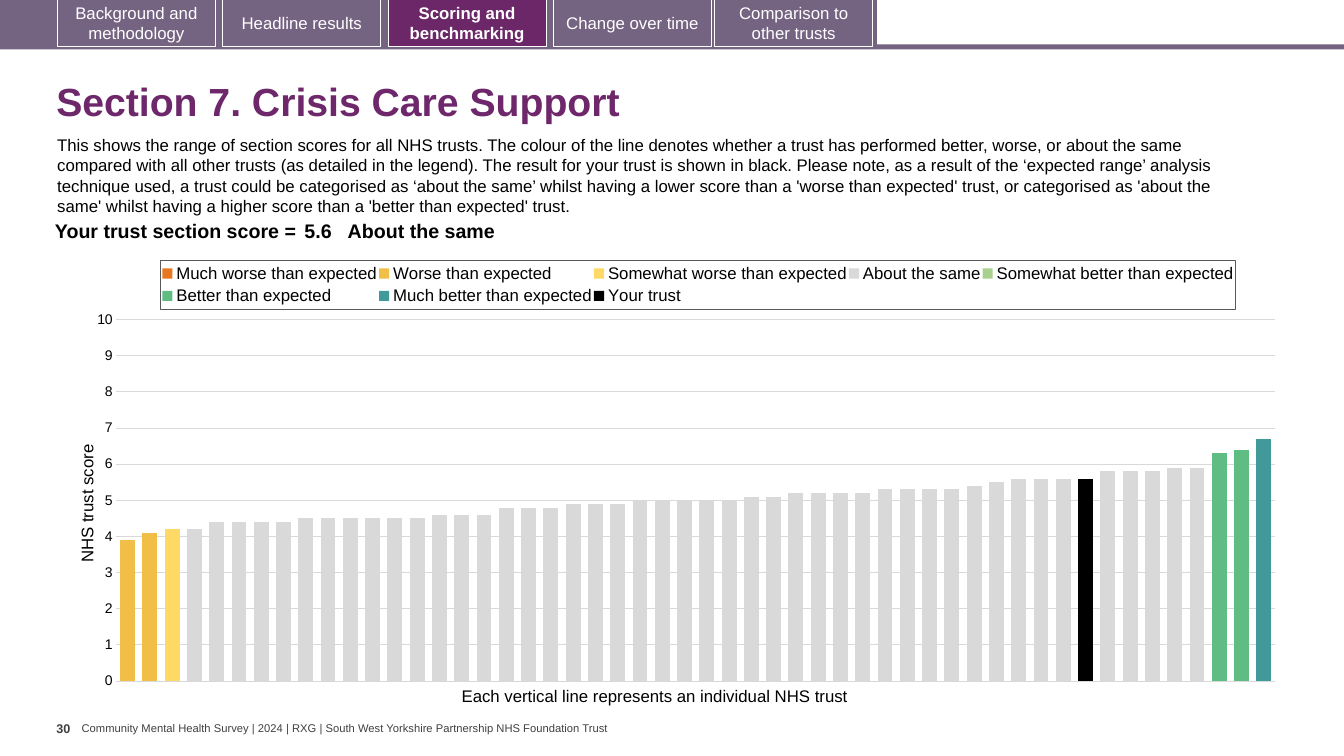
from copy import deepcopy

from lxml.etree import SubElement
from pptx import Presentation
from pptx.chart.data import CategoryChartData
from pptx.dml.color import RGBColor
from pptx.enum.chart import XL_CHART_TYPE, XL_LEGEND_POSITION, XL_TICK_MARK
from pptx.enum.shapes import MSO_SHAPE
from pptx.enum.text import MSO_ANCHOR, PP_ALIGN
from pptx.oxml import parse_xml
from pptx.oxml.ns import nsdecls, qn
from pptx.util import Pt

WHITE = RGBColor(0xFF, 0xFF, 0xFF)
BLACK = RGBColor(0, 0, 0)
DARK_GREY = RGBColor(0x40, 0x40, 0x40)
AXIS_GREY = RGBColor(0x59, 0x59, 0x59)
GRID_GREY = RGBColor(0xD9, 0xD9, 0xD9)
BAND_PURPLE = RGBColor(0x75, 0x63, 0x82)
ACTIVE_PURPLE = RGBColor(0x6B, 0x27, 0x68)
TITLE_PURPLE = RGBColor(0x6D, 0x27, 0x6A)

TABS = [("Background and methodology", 41), ("Headline results", 159.1),
        ("Scoring and benchmarking", 277.2), ("Change over time", 395.3),
        ("Comparison to other trusts", 510.5)]
ACTIVE_TAB = "Scoring and benchmarking"

INTRODUCTION = (
    "This shows the range of section scores for all NHS trusts. The colour of the line denotes "
    "whether a trust has performed better, worse, or about the same compared with all other trusts "
    "(as detailed in the legend). The result for your trust is shown in black. Please note, as a "
    "result of the ‘expected range’ analysis technique used, a trust could be categorised as ‘about "
    "the same’ whilst having a lower score than a 'worse than expected' trust, or categorised as "
    "'about the same' whilst having a higher score than a 'better than expected' trust.")

TRUST_COUNT = 52
ABOUT_THE_SAME = (
    [4.2] + [4.4] * 4 + [4.5] * 6 + [4.6] * 3 + [4.8] * 3 + [4.9] * 3 + [5] * 5 + [5.1] * 2
    + [5.2] * 4 + [5.3] * 4 + [5.4, 5.5] + [5.6] * 4 + [5.8] * 3 + [5.9] * 2)
# Name, colour, position of the first bar, scores
SERIES = [
    ("Much worse than expected", RGBColor(0xE8, 0x77, 0x22), 0, []),
    ("Worse than expected", RGBColor(0xF1, 0xBE, 0x48), 0, [3.9, 4.1]),
    ("Somewhat worse than expected", RGBColor(0xFF, 0xD9, 0x66), 2, [4.2]),
    ("About the same", GRID_GREY, 3, ABOUT_THE_SAME),
    ("Somewhat better than expected", RGBColor(0xA9, 0xD1, 0x8E), 0, []),
    ("Better than expected", RGBColor(0x5F, 0xBD, 0x83), 49, [6.3, 6.4]),
    ("Much better than expected", RGBColor(0x41, 0x99, 0x99), 51, [6.7]),
    ("Your trust", BLACK, 43, [5.6]),
]


def write_text(frame, text, size=12, color=BLACK, bold=False, align=PP_ALIGN.LEFT,
               anchor=MSO_ANCHOR.TOP, wrap=True, margins=(7.2, 3.6), line_spacing=None):
    frame.word_wrap = wrap
    frame.vertical_anchor = anchor
    frame.margin_left = frame.margin_right = Pt(margins[0])
    frame.margin_top = frame.margin_bottom = Pt(margins[1])
    paragraph = frame.paragraphs[0]
    paragraph.alignment = align
    paragraph.line_spacing = line_spacing
    run = paragraph.add_run()
    run.text = text
    set_font(run.font, size, color, bold)


def set_font(font, size, color=BLACK, bold=False, name="Arial"):
    font.name, font.size, font.bold = name, Pt(size), bold
    font.color.rgb = color


def add_text(slide, text, left, top, width, height, **text_format):
    box = slide.shapes.add_textbox(Pt(left), Pt(top), Pt(width), Pt(height))
    write_text(box.text_frame, text, **text_format)


def add_rectangle(slide, left, top, width, height, fill, line=None):
    shape = slide.shapes.add_shape(MSO_SHAPE.RECTANGLE, Pt(left), Pt(top), Pt(width), Pt(height))
    shape.shadow.inherit = False
    shape.fill.solid()
    shape.fill.fore_color.rgb = fill
    if line is None:
        shape.line.fill.background()
    else:
        shape.line.color.rgb = line
        shape.line.width = Pt(0.75)
    return shape


def add_navigation(slide, left, top, width):
    add_rectangle(slide, left, top + 31.7, width, 3.6, BAND_PURPLE)
    add_rectangle(slide, left, top, 626.4, 33.8, BAND_PURPLE)
    for label, offset in TABS:
        active = label == ACTIVE_TAB
        tab = add_rectangle(slide, left + offset, top - 0.7, 113, 33.8,
                            ACTIVE_PURPLE if active else BAND_PURPLE, line=WHITE)
        write_text(tab.text_frame, label, color=WHITE, bold=active,
                   align=PP_ALIGN.CENTER, anchor=MSO_ANCHOR.MIDDLE)


def add_score_table(slide, left, top, width, height):
    cells = [("Your trust section score =", 189.4, PP_ALIGN.RIGHT, 2.88),
             ("5.6", 33.8, PP_ALIGN.LEFT, 2.88),
             ("About the same", width - 223.2, PP_ALIGN.LEFT, 0)]
    table = slide.shapes.add_table(1, len(cells), Pt(left), Pt(top), Pt(width), Pt(height)).table
    table.first_row = table.horz_banding = False
    for index, (text, column_width, align, side_margin) in enumerate(cells):
        table.columns[index].width = Pt(column_width)
        cell = table.cell(0, index)
        cell.fill.background()
        write_text(cell.text_frame, text, size=14, bold=True, align=align)
        cell.margin_left = cell.margin_right = Pt(side_margin)
        cell.margin_top = cell.margin_bottom = Pt(2.88)


def make_layout(x, y, width=None, height=None, inner=False):
    layout = parse_xml(f"<c:layout {nsdecls('c')}><c:manualLayout/></c:layout>")
    values = [("layoutTarget", "inner" if inner else None), ("xMode", "edge"), ("yMode", "edge"),
              ("x", x), ("y", y), ("w", width), ("h", height)]
    for tag, value in values:
        if value is not None:
            SubElement(layout[0], qn(f"c:{tag}")).set("val", str(value))
    return layout


def move_last_series_to_right_axis(chart):
    """Put the last series in a bar group of its own, on a second pair of axes."""
    plot_area = chart.plots[0]._element.getparent()
    left_group = plot_area.find(qn("c:barChart"))
    right_group = deepcopy(left_group)
    left_series = left_group.findall(qn("c:ser"))
    left_group.remove(left_series[-1])
    for series in right_group.findall(qn("c:ser"))[:-1]:
        right_group.remove(series)
    left_group.addnext(right_group)
    for axis_id, value in zip(right_group.findall(qn("c:axId")), ("5001", "5002")):
        axis_id.set("val", value)
    axis = ('<c:{kind} {ns}><c:axId val="{id}"/><c:scaling><c:orientation val="minMax"/>{limits}'
            '</c:scaling><c:delete val="{hidden}"/><c:axPos val="{side}"/>'
            '<c:majorTickMark val="out"/><c:minorTickMark val="none"/><c:tickLblPos val="none"/>'
            '<c:spPr><a:ln><a:noFill/></a:ln></c:spPr>'
            '<c:crossAx val="{other}"/><c:crosses val="{crosses}"/></c:{kind}>')
    namespaces = nsdecls("c", "a")
    last_axis = plot_area.find(qn("c:valAx"))
    right_axis = parse_xml(axis.format(
        kind="valAx", ns=namespaces, id=5002, other=5001, hidden=0, side="r", crosses="max",
        limits='<c:max val="10"/><c:min val="0"/>'))
    hidden_axis = parse_xml(axis.format(
        kind="catAx", ns=namespaces, id=5001, other=5002, hidden=1, side="b",
        crosses="autoZero", limits=""))
    last_axis.addnext(right_axis)
    right_axis.addnext(hidden_axis)


def add_score_chart(slide, left, top, width, height):
    data = CategoryChartData()
    data.categories = [str(number + 1) for number in range(TRUST_COUNT)]
    for name, color, start, scores in SERIES:
        data.add_series(name, [None] * start + scores
                        + [None] * (TRUST_COUNT - start - len(scores)))
    chart = slide.shapes.add_chart(XL_CHART_TYPE.COLUMN_CLUSTERED, Pt(left), Pt(top),
                                   Pt(width), Pt(height), data).chart
    set_font(chart.font, 10, name="Calibri")
    chart.has_title = False

    # Bars
    plot = chart.plots[0]
    plot.gap_width, plot.overlap, plot.vary_by_categories = 50, 100, False
    for series, (name, color, start, scores) in zip(plot.series, SERIES):
        series.format.fill.solid()
        series.format.fill.fore_color.rgb = color
        series.invert_if_negative = False

    # Axes
    chart.category_axis.visible = False
    axis = chart.value_axis
    axis.minimum_scale, axis.maximum_scale, axis.major_unit = 0, 10, 1
    axis.major_tick_mark = XL_TICK_MARK.NONE
    axis.format.line.fill.background()
    axis.major_gridlines.format.line.color.rgb = GRID_GREY
    axis.major_gridlines.format.line.width = Pt(0.75)
    set_font(axis.tick_labels.font, 10)
    title = axis.axis_title
    write_title = title.text_frame.paragraphs[0].add_run()
    write_title.text = "NHS trust score"
    set_font(write_title.font, 12)
    for layout in title._element.findall(qn("c:layout")):
        title._element.remove(layout)
    title._element.find(qn("c:tx")).addnext(make_layout(0.005, 0.43))

    # Legend
    chart.has_legend = True
    legend = chart.legend
    legend.position = XL_LEGEND_POSITION.TOP
    legend.include_in_layout = False
    set_font(legend.font, 12)
    for layout in legend._element.findall(qn("c:layout")):
        legend._element.remove(layout)
    legend._element.find(qn("c:legendPos")).addnext(make_layout(0.076, 0.025, 0.878, 0.11))
    border = parse_xml(f'<c:spPr {nsdecls("c", "a")}><a:ln w="9525"><a:solidFill>'
                       f'<a:srgbClr val="{AXIS_GREY}"/></a:solidFill></a:ln></c:spPr>')
    legend._element.find(qn("c:txPr")).addprevious(border)

    # Plot area
    plot_area = plot._element.getparent()
    for layout in plot_area.findall(qn("c:layout")):
        plot_area.remove(layout)
    plot_area.insert(0, make_layout(0.04, 0.158, 0.946, 0.808, inner=True))
    move_last_series_to_right_axis(chart)


def add_footer(slide, left, top):
    add_text(slide, "30", left, top, 18, 28.8, size=9, color=DARK_GREY, bold=True,
             wrap=False, margins=(0, 3.6))
    add_text(slide, "Community Mental Health Survey | 2024 | RXG | "
             "South West Yorkshire Partnership NHS Foundation Trust", left + 18, top + 4.3,
             381.6, 9.4, size=8, color=DARK_GREY, anchor=MSO_ANCHOR.MIDDLE,
             wrap=False, margins=(0, 0))


def main():
    presentation = Presentation()
    presentation.slide_width, presentation.slide_height = Pt(960), Pt(540)
    slide = presentation.slides.add_slide(presentation.slide_layouts[6])
    add_navigation(slide, 0, 0, 960)
    add_text(slide, "Section 7. Crisis Care Support", 33.1, 48.2, 899.3, 51.8, size=28,
             color=TITLE_PURPLE, bold=True, anchor=MSO_ANCHOR.MIDDLE, line_spacing=0.9)
    add_text(slide, INTRODUCTION, 33.8, 92.9, 873.4, 65.5)
    add_score_chart(slide, 48.2, 177.8, 874.8, 319.7)
    add_text(slide, "Each vertical line represents an individual NHS trust",
             322.6, 486, 295.9, 21.6, wrap=False)
    add_score_table(slide, 25.2, 154.8, 842.4, 15.8)
    add_footer(slide, 40.3, 511.2)
    presentation.save("out.pptx")


if __name__ == "__main__":
    main()
